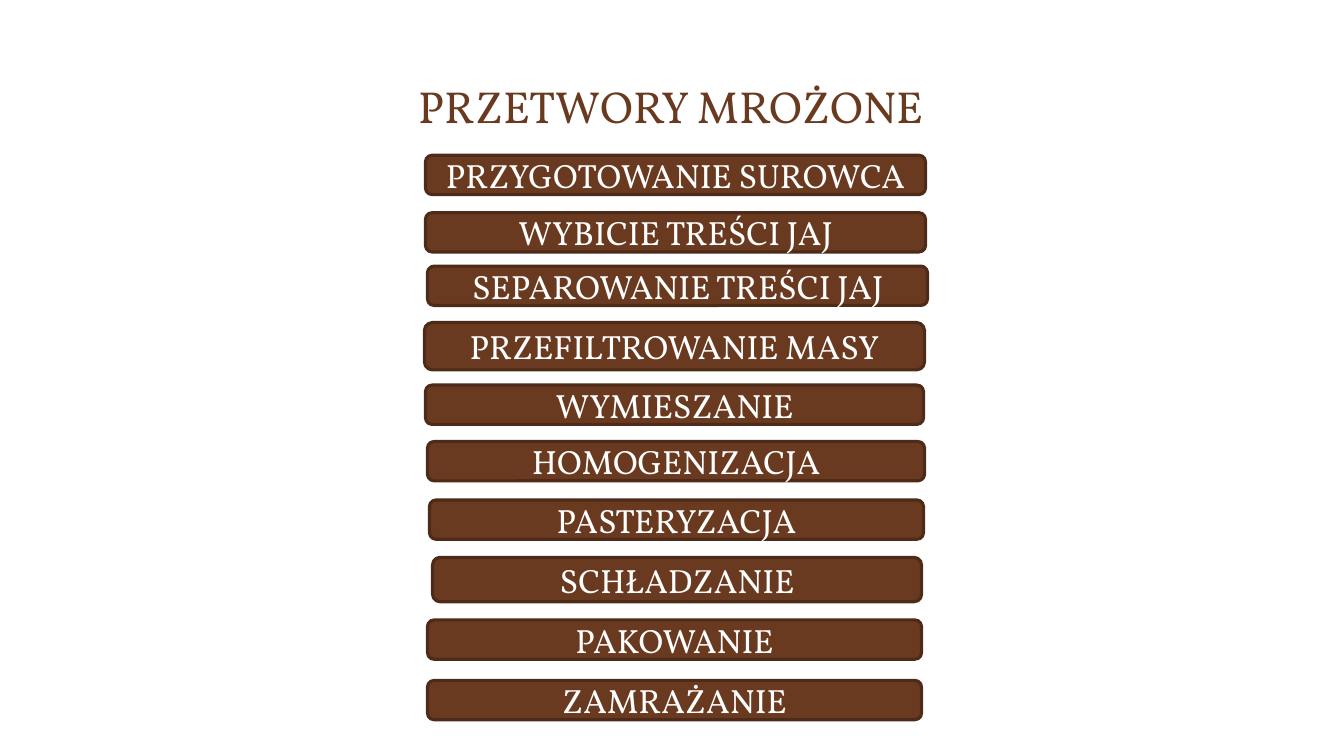
from pptx import Presentation
from pptx.dml.color import RGBColor
from pptx.enum.shapes import MSO_SHAPE
from pptx.enum.text import MSO_ANCHOR, PP_ALIGN
from pptx.util import Inches, Pt

FONT = "Vollkorn"
BROWN, DARK, WHITE = "6A3A20", "4E2B18", "FFFFFF"

# Text, left, top, width, height in inches
STEPS = [
    ("PRZYGOTOWANIE SUROWCA", 4.22, 1.54, 4.96, 0.39),
    ("WYBICIE TREŚCI JAJ", 4.22, 2.11, 4.96, 0.39),
    ("SEPAROWANIE TREŚCI JAJ", 4.24, 2.64, 4.96, 0.39),
    ("PRZEFILTROWANIE MASY", 4.21, 3.2, 4.96, 0.47),
    ("WYMIESZANIE", 4.22, 3.82, 4.94, 0.39),
    ("HOMOGENIZACJA", 4.24, 4.38, 4.93, 0.39),
    ("PASTERYZACJA", 4.26, 4.96, 4.9, 0.39),
    ("SCHŁADZANIE", 4.29, 5.53, 4.85, 0.44),
    ("PAKOWANIE", 4.24, 6.15, 4.9, 0.39),
    ("ZAMRAŻANIE", 4.24, 6.75, 4.9, 0.39),
]


def color(value):
    return RGBColor.from_string(value)


def write(shape, text, size, tint, anchor):
    frame = shape.text_frame
    frame.word_wrap = True
    frame.vertical_anchor = anchor
    para = frame.paragraphs[0]
    para.alignment = PP_ALIGN.CENTER
    run = para.add_run()
    run.text = text
    run.font.name = FONT
    run.font.size = Pt(size)
    run.font.color.rgb = color(tint)


def add_title(slide, text):
    box = slide.shapes.add_textbox(
        Inches(1.33), Inches(0.47), Inches(10.66), Inches(0.89))
    write(box, text, 32, BROWN, MSO_ANCHOR.BOTTOM)


def add_step(slide, text, *place):
    bar = slide.shapes.add_shape(
        MSO_SHAPE.ROUNDED_RECTANGLE, *map(Inches, place))
    bar.shadow.inherit = False
    bar.fill.solid()
    bar.fill.fore_color.rgb = color(BROWN)
    bar.line.color.rgb = color(DARK)
    bar.line.width = Pt(2.25)
    write(bar, text, 24, WHITE, MSO_ANCHOR.MIDDLE)


def main():
    deck = Presentation()
    deck.slide_width = Inches(13.33)
    deck.slide_height = Inches(7.5)
    slide = deck.slides.add_slide(deck.slide_layouts[6])
    add_title(slide, "PRZETWORY MROŻONE")
    for step in STEPS:
        add_step(slide, *step)
    deck.save("out.pptx")


if __name__ == "__main__":
    main()
